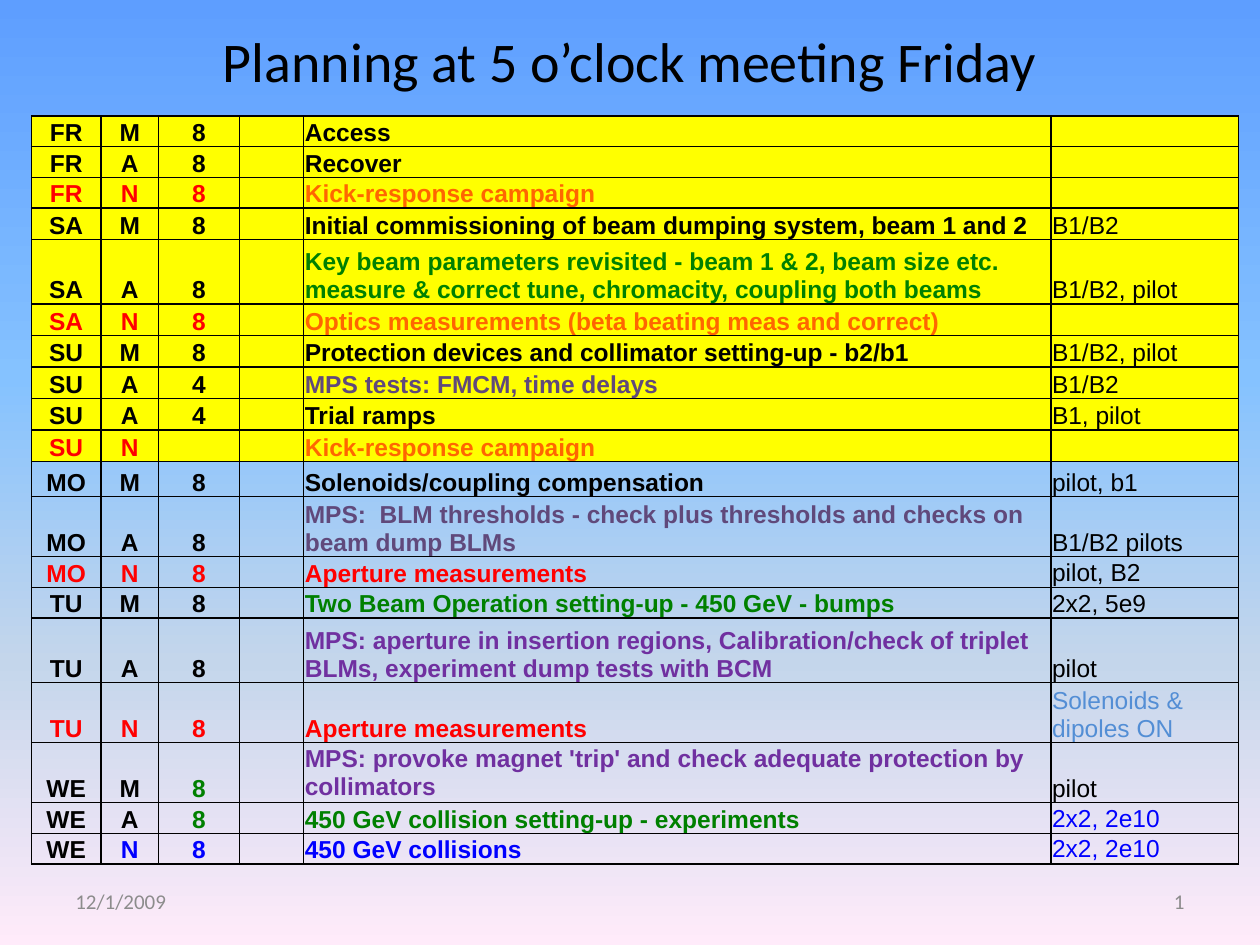
from copy import deepcopy

from lxml.etree import SubElement
from pptx import Presentation
from pptx.dml.color import RGBColor
from pptx.enum.text import MSO_ANCHOR, PP_ALIGN
from pptx.oxml.ns import qn
from pptx.util import Inches, Pt

LEFT, CENTER, RIGHT = PP_ALIGN.LEFT, PP_ALIGN.CENTER, PP_ALIGN.RIGHT
MIDDLE, BOTTOM = MSO_ANCHOR.MIDDLE, MSO_ANCHOR.BOTTOM

THEME = {
    "black": "000000", "red": "FF0000", "orange": "FF6600", "green": "008000",
    "plum": "60497B", "purple": "7030A0", "sky": "538ED5", "blue": "0000FF",
    "gray": "8C8C8C", "yellow": "FFFF00",
    "backdrop": [(0, "5E9EFF"), (0.4, "85C2FF"), (0.7, "C4D6EB"), (1, "FFEBFA")],
    "title": {"name": "Calibri", "size": Pt(32)},
    "footer": {"name": "Calibri", "size": Pt(12)},
    "strong": {"name": "Arial", "size": Pt(14), "bold": True},
    "plain": {"name": "Arial", "size": Pt(14), "bold": False},
}


def write(para, text, style, color, align):
    para.alignment = align
    span = para.add_run()
    span.text = text
    for name, value in THEME[style].items():
        setattr(span.font, name, value)
    span.font.color.rgb = RGBColor.from_string(THEME[color])


def add_borders(cell):
    properties = cell._tc.get_or_add_tcPr()
    for side in ("a:lnL", "a:lnR", "a:lnT", "a:lnB"):
        line = SubElement(properties, qn(side), w=str(Pt(1)))
        solid = SubElement(line, qn("a:solidFill"))
        SubElement(solid, qn("a:srgbClr"), val=THEME["black"])


deck = Presentation()
deck.slide_width, deck.slide_height = Inches(10), Inches(7.5)
page = deck.slides.add_slide(deck.slide_layouts[6])

backdrop = page.background.fill
backdrop.gradient()
backdrop.gradient_angle = 270
stop_list = page.element.find(".//" + qn("a:gsLst"))
for extra in range(len(THEME["backdrop"]) - len(stop_list)):
    stop_list.append(deepcopy(stop_list[0]))
for stop, (position, color) in zip(backdrop.gradient_stops, THEME["backdrop"]):
    stop.position = position
    stop.color.rgb = RGBColor.from_string(color)

labels = [
    ("Planning at 5 o’clock meeting Friday", (0.5, 0.17, 9, 0.62), "title", "black", CENTER),
    ("12/1/2009", (0.5, 6.95, 2.33, 0.4), "footer", "gray", LEFT),
    ("1", (7.17, 6.95, 2.33, 0.4), "footer", "gray", RIGHT),
]
for text, place, style, color, align in labels:
    box = page.shapes.add_textbox(*map(Inches, place))
    box.text_frame.word_wrap = True
    box.text_frame.vertical_anchor = MIDDLE
    write(box.text_frame.paragraphs[0], text, style, color, align)

shifts = [
    (0.24, "FR", "M", "8", "Access", "black", ""),
    (0.23, "FR", "A", "8", "Recover", "black", ""),
    (0.24, "FR", "N", "8", "Kick-response campaign", "orange", ""),
    (0.25, "SA", "M", "8", "Initial commissioning of beam dumping system, beam 1 and 2",
     "black", "B1/B2"),
    (0.51, "SA", "A", "8", "Key beam parameters revisited - beam 1 & 2, beam size etc. "
     "measure & correct tune, chromacity, coupling both beams", "green", "B1/B2, pilot"),
    (0.25, "SA", "N", "8", "Optics measurements (beta beating meas and correct)", "orange", ""),
    (0.25, "SU", "M", "8", "Protection devices and collimator setting-up - b2/b1",
     "black", "B1/B2, pilot"),
    (0.25, "SU", "A", "4", "MPS tests: FMCM, time delays", "plum", "B1/B2"),
    (0.25, "SU", "A", "4", "Trial ramps", "black", "B1, pilot"),
    (0.25, "SU", "N", "", "Kick-response campaign", "orange", ""),
    (0.28, "MO", "M", "8", "Solenoids/coupling compensation", "black", "pilot, b1"),
    (0.45, "MO", "A", "8", "MPS:  BLM thresholds - check plus thresholds and checks on "
     "beam dump BLMs", "plum", "B1/B2 pilots"),
    (0.24, "MO", "N", "8", "Aperture measurements", "red", "pilot, B2"),
    (0.24, "TU", "M", "8", "Two Beam Operation setting-up - 450 GeV - bumps",
     "green", "2x2, 5e9"),
    (0.51, "TU", "A", "8", "MPS: aperture in insertion regions, Calibration/check of triplet "
     "BLMs, experiment dump tests with BCM", "purple", "pilot"),
    (0.45, "TU", "N", "8", "Aperture measurements", "red", "Solenoids & dipoles ON"),
    (0.45, "WE", "M", "8", "MPS: provoke magnet 'trip' and check adequate protection by "
     "collimators", "purple", "pilot"),
    (0.24, "WE", "A", "8", "450 GeV collision setting-up - experiments", "green", "2x2, 2e10"),
    (0.24, "WE", "N", "8", "450 GeV collisions", "blue", "2x2, 2e10"),
]
column_widths = [0.55, 0.46, 0.64, 0.51, 5.93, 1.49]
special_colors = {
    (15, 5): "sky", (16, 2): "green", (17, 2): "green", (17, 5): "blue",
    (18, 0): "black", (18, 1): "blue", (18, 2): "blue", (18, 5): "blue",
}
middle_cells = {(12, 5), (16, 4), (17, 5), (18, 5)}
weekend = ("FR", "SA", "SU")
cell_format = {
    "margin_left": Inches(0.01), "margin_right": Inches(0.01),
    "margin_top": Inches(0.01), "margin_bottom": 0,
}

table_height = sum(shift[0] for shift in shifts)
plan = page.shapes.add_table(
    len(shifts), len(column_widths), Inches(0.25), Inches(0.92),
    Inches(sum(column_widths)), Inches(table_height)).table
plan.first_row = plan.horz_banding = False
for column, width in zip(plan.columns, column_widths):
    column.width = Inches(width)

for row, (height, day, shift, hours, task, task_color, beam) in enumerate(shifts):
    plan.rows[row].height = Inches(height)
    key_color = "red" if shift == "N" else "black"
    colors = [key_color] * 4 + [task_color, "black"]
    for column, text in enumerate((day, shift, hours, "", task, beam)):
        cell = plan.cell(row, column)
        for name, value in cell_format.items():
            setattr(cell, name, value)
        cell.vertical_anchor = MIDDLE if (row, column) in middle_cells else BOTTOM
        add_borders(cell)
        if day in weekend:
            cell.fill.solid()
            cell.fill.fore_color.rgb = RGBColor.from_string(THEME["yellow"])
        else:
            cell.fill.background()
        para = cell.text_frame.paragraphs[0]
        if text:
            write(para, text, "plain" if column == 5 else "strong",
                  special_colors.get((row, column), colors[column]),
                  CENTER if column < 4 else LEFT)
        else:
            size = THEME["plain"]["size"].centipoints
            SubElement(para._p, qn("a:endParaRPr"), sz=str(size))

deck.save("out.pptx")
